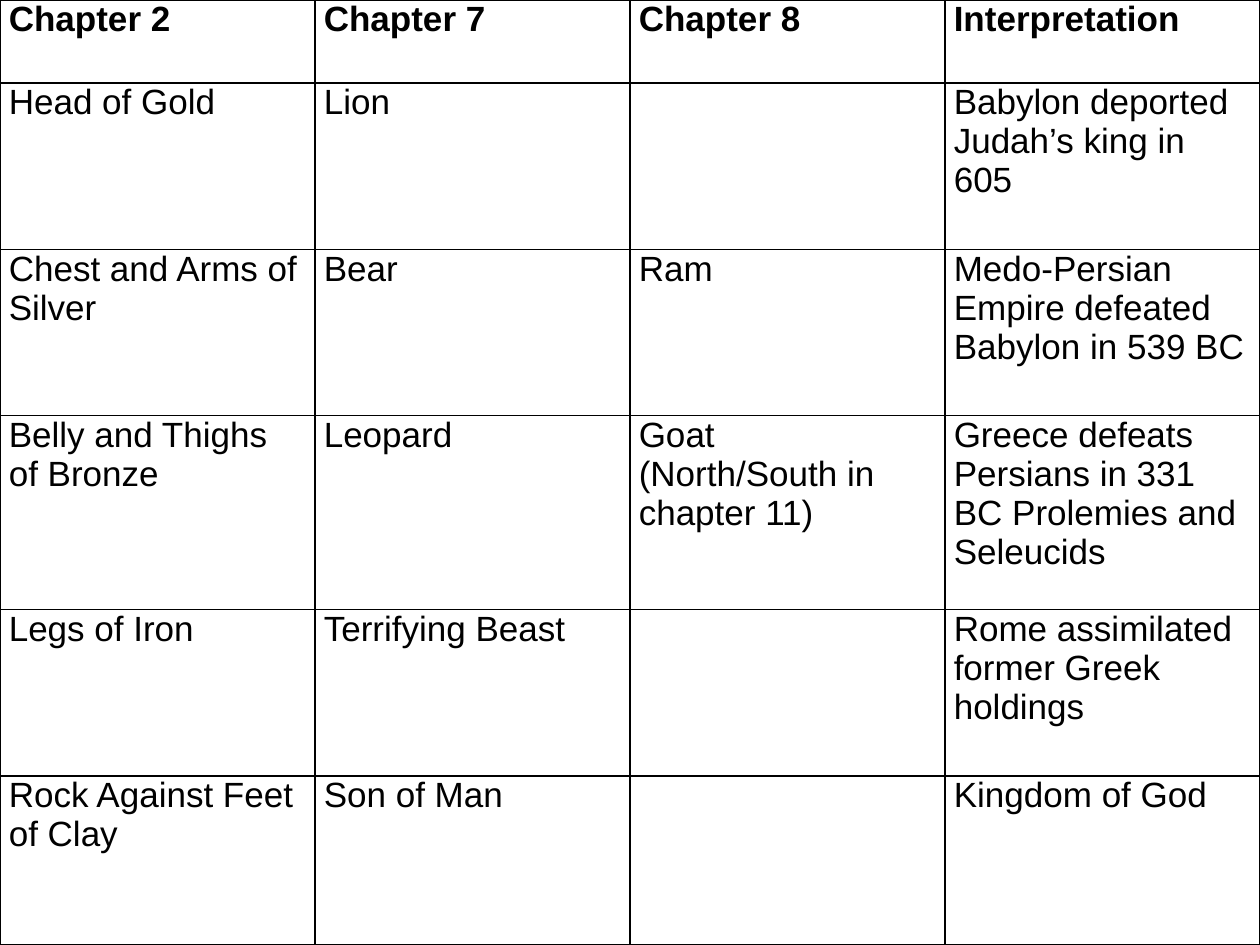
from pptx import Presentation
from pptx.dml.color import RGBColor as Color
from pptx.oxml.ns import qn
from pptx.util import Inches, Pt
from lxml.etree import SubElement

COLORS = {"ink": "000000", "paper": "FFFFFF"}
COLUMN_WIDTH = 2.5
ROW_HEIGHTS = [0.66, 1.32, 1.32, 1.54, 1.32, 1.34]
ROWS = [
    ["Chapter 2", "Chapter 7", "Chapter 8", "Interpretation"],
    ["Head of Gold", "Lion", "", "Babylon deported Judah’s king in 605"],
    ["Chest and Arms of Silver", "Bear", "Ram",
     "Medo-Persian Empire defeated Babylon in 539 BC"],
    ["Belly and Thighs of Bronze", "Leopard",
     "Goat\n(North/South in chapter 11)",
     "Greece defeats Persians in 331 BC Prolemies and Seleucids"],
    ["Legs of Iron", "Terrifying Beast", "",
     "Rome assimilated former Greek holdings"],
    ["Rock Against Feet of Clay", "Son of Man", "", "Kingdom of God"],
]


class SlideBuilder:
    font_name = "Arial"
    font_size = Pt(20)
    border_width = Pt(1)
    side_margin = Inches(0.07)

    def __init__(self, page):
        self.page = page

    def table(self, left, top, column_width, row_heights, rows):
        columns = len(rows[0])
        frame = self.page.shapes.add_table(
            len(rows), columns, Inches(left), Inches(top),
            Inches(column_width * columns), Inches(sum(row_heights)))
        grid = frame.table
        grid.horz_banding = False
        for column in grid.columns:
            column.width = Inches(column_width)
        for row, height in zip(grid.rows, row_heights):
            row.height = Inches(height)
        for row_index, texts in enumerate(rows):
            for column_index, text in enumerate(texts):
                self.cell(grid.cell(row_index, column_index), text,
                          bold=row_index == 0)

    def cell(self, cell, text, bold):
        cell.margin_left = cell.margin_right = self.side_margin
        cell.margin_top = cell.margin_bottom = 0
        self.borders(cell)
        cell.fill.solid()
        cell.fill.fore_color.rgb = Color.from_string(COLORS["paper"])
        cell.text = text
        for para in cell.text_frame.paragraphs:
            para.font.name = self.font_name
            para.font.size = self.font_size
            para.font.bold = bold
            para.font.color.rgb = Color.from_string(COLORS["ink"])

    def borders(self, cell):
        properties = cell._tc.get_or_add_tcPr()
        for side in ("a:lnL", "a:lnR", "a:lnT", "a:lnB"):
            line = SubElement(properties, qn(side), w=str(self.border_width))
            fill = SubElement(line, qn("a:solidFill"))
            SubElement(fill, qn("a:srgbClr"), val=COLORS["ink"])


def main():
    deck = Presentation()
    deck.slide_width = Inches(10)
    deck.slide_height = Inches(7.5)
    builder = SlideBuilder(deck.slides.add_slide(deck.slide_layouts[6]))
    builder.table(0, 0, COLUMN_WIDTH, ROW_HEIGHTS, ROWS)
    deck.save("out.pptx")


if __name__ == "__main__":
    main()
